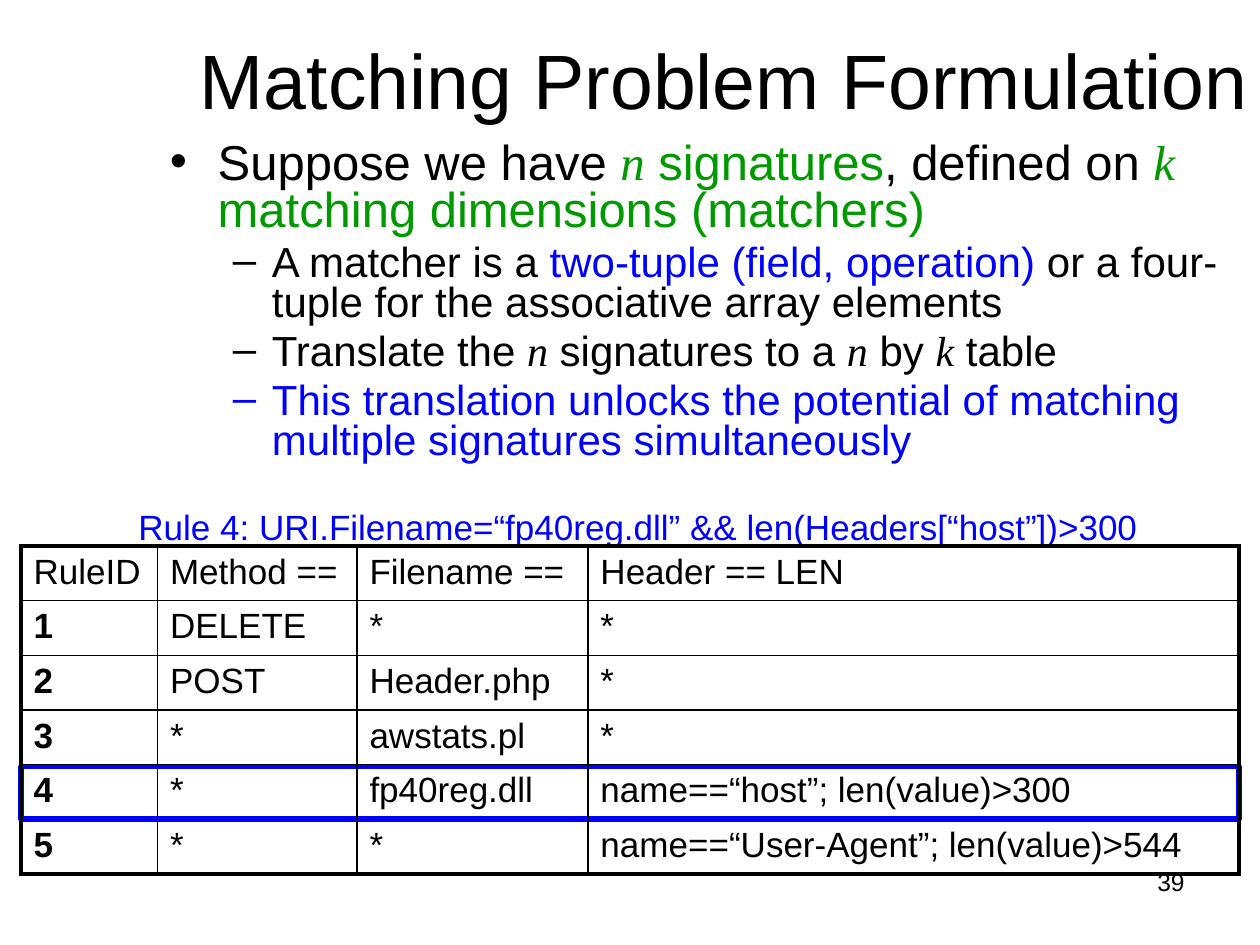
from lxml import etree
from pptx import Presentation
from pptx import util as u
from pptx.dml.color import RGBColor
from pptx.enum import shapes, text
from pptx.oxml.ns import qn

COLORS = {"black": "000000", "green": "009900", "blue": "0000FF"}
SANS, SERIF = "Arial", "Times New Roman"

deck = Presentation()
deck.slide_width, deck.slide_height = u.Inches(10), u.Inches(7.5)
CELL = deck.slide_width / 120  # the slide is a grid of 120 columns by 90 rows


def grid(*counts):
    return [round(count * CELL) for count in counts]


def write(para, spans, size):
    """Fill a paragraph with (words, colour, is_variable) spans."""
    for words, color, is_variable in spans:
        span = para.add_run()
        span.text = words
        span.font.size = u.Pt(size)
        span.font.name = SERIF if is_variable else SANS
        span.font.italic = is_variable
        span.font.color.rgb = RGBColor.from_string(COLORS[color])


page = deck.slides.add_slide(deck.slide_layouts[5])

# Title
title = page.shapes.title
title.left, title.top, title.width, title.height = grid(15, 0, 108, 15)
title.text_frame.vertical_anchor = text.MSO_ANCHOR.MIDDLE
title_para = title.text_frame.paragraphs[0]
title_para.alignment = text.PP_ALIGN.CENTER
write(title_para, [("Matching Problem Formulation", "black", False)], 44)

# Page number
number = page.shapes.add_textbox(*grid(86, 82, 28, 6.25))
number.text_frame.word_wrap = True
number_para = number.text_frame.paragraphs[0]
number_para.alignment = text.PP_ALIGN.RIGHT
write(number_para, [("39", "black", False)], 14)

# Bulleted text
LEVELS = [(28, 0.38, -0.38, "•"), (24, 0.81, -0.31, "–")]
points = [
    (0, [("Suppose we have ", "black", False), ("n", "green", True),
         (" signatures", "green", False), (", defined on ", "black", False),
         ("k", "green", True), (" matching dimensions (matchers)", "green", False)]),
    (1, [("A matcher is a ", "black", False),
         ("two-tuple (field, operation)", "blue", False),
         (" or a four-tuple for the associative array elements", "black", False)]),
    (1, [("Translate the ", "black", False), ("n", "black", True),
         (" signatures to a ", "black", False), ("n", "black", True),
         (" by ", "black", False), ("k", "black", True), (" table", "black", False)]),
    (1, [("This translation unlocks the potential of matching multiple "
          "signatures simultaneously", "blue", False)]),
]
body = page.shapes.add_textbox(*grid(15, 13, 109, 34))
body.text_frame.word_wrap = True
for index, (level, spans) in enumerate(points):
    size, margin, indent, mark = LEVELS[level]
    para = body.text_frame.add_paragraph() if index else body.text_frame.paragraphs[0]
    para.level = level
    para.line_spacing = 0.8
    para.space_before = u.Pt(0.2 * size if index else 0)
    props = para._p.get_or_add_pPr()
    props.set("marL", str(u.Inches(margin)))
    props.set("indent", str(u.Inches(indent)))
    etree.SubElement(props, qn("a:buFont"), typeface=SANS)
    etree.SubElement(props, qn("a:buChar"), char=mark)
    write(para, spans, size)

# Rule spelled out above the table
rule = page.shapes.add_textbox(*grid(12, 48, 101, 4.8))
rule.text_frame.word_wrap = True
rule_para = rule.text_frame.paragraphs[0]
rule_para.line_spacing = 0.9
write(rule_para, [("Rule 4: URI.Filename=“fp40reg.dll” && len(Headers[“host”])>300",
                   "blue", False)], 20)

# Frame around rule 4, seen through the unfilled table
frame = page.shapes.add_shape(shapes.MSO_SHAPE.RECTANGLE, *grid(2, 73, 116, 5))
frame.shadow.inherit = False
frame.fill.background()
frame.line.color.rgb = RGBColor.from_string(COLORS["blue"])
frame.line.width = u.Pt(3)

# Signature table
rows = [
    ("RuleID", "Method ==", "Filename ==", "Header == LEN"),
    ("1", "DELETE", "*", "*"),
    ("2", "POST", "Header.php", "*"),
    ("3", "*", "awstats.pl", "*"),
    ("4", "*", "fp40reg.dll", "name==“host”; len(value)>300"),
    ("5", "*", "*", "name==“User-Agent”; len(value)>544"),
]
widths = grid(13, 19, 22, 62)
last_row, last_column = len(rows) - 1, len(widths) - 1
table = page.shapes.add_table(len(rows), len(widths), *grid(2, 52, 116, 31.2)).table
table.first_row = table.horz_banding = False
for column, width in zip(table.columns, widths):
    column.width = width

for r, row in enumerate(rows):
    for c, words in enumerate(row):
        cell = table.cell(r, c)
        para = cell.text_frame.paragraphs[0]
        write(para, [(words, "black", False)], 20)
        para.runs[0].font.bold = c == 0 and r > 0
        props = cell._tc.get_or_add_tcPr()
        outer = {"L": c == 0, "R": c == last_column, "T": r == 0, "B": r == last_row}
        for side, is_outer in outer.items():
            edge = etree.SubElement(props, qn("a:ln" + side),
                                    w=str(u.Pt(2.25 if is_outer else 1)))
            fill = etree.SubElement(edge, qn("a:solidFill"))
            etree.SubElement(fill, qn("a:srgbClr"), val=COLORS["black"])
        cell.fill.background()

deck.save("out.pptx")
